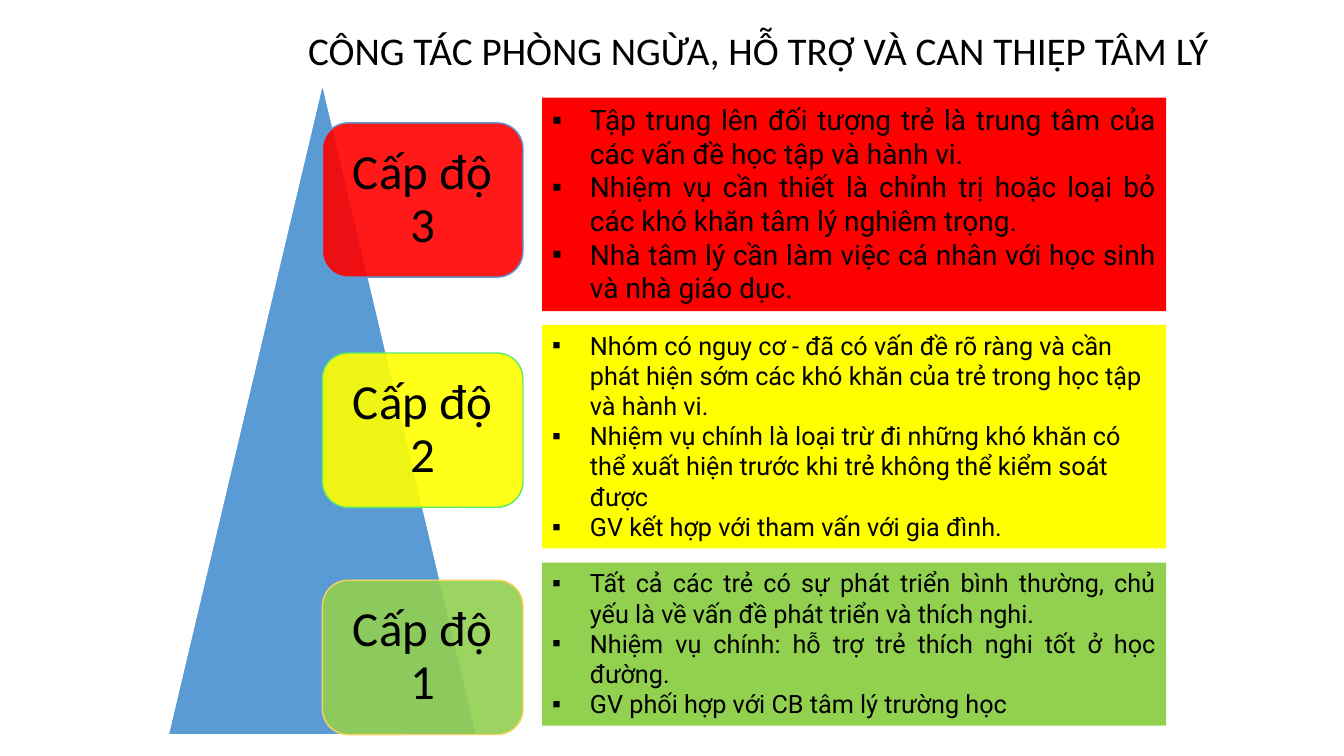
from lxml.etree import SubElement
from pptx import Presentation
from pptx.dml.color import RGBColor
from pptx.enum.shapes import MSO_SHAPE as Shape
from pptx.enum.text import MSO_ANCHOR as Anchor, MSO_AUTO_SIZE as AutoSize, PP_ALIGN as Align
from pptx.oxml.ns import qn
from pptx.util import Pt

BLACK = RGBColor(0x00, 0x00, 0x00)
WHITE = RGBColor(0xFF, 0xFF, 0xFF)
BLUE = RGBColor(0x5B, 0x9B, 0xD5)
RED = RGBColor(0xFF, 0x00, 0x00)
YELLOW = RGBColor(0xFF, 0xFF, 0x00)
GREEN = RGBColor(0x92, 0xD0, 0x50)
MINT = RGBColor(0x5A, 0xEC, 0x68)
GOLD = RGBColor(0xFE, 0xD1, 0x5E)

TITLE = "CÔNG TÁC PHÒNG NGỪA, HỖ TRỢ VÀ CAN THIỆP TÂM LÝ"
COMPARISON_LAYOUT = 4
LABEL_LEFT, LABEL_WIDTH, LABEL_HEIGHT = 230.3, 143.3, 110.2
DUTIES_LEFT, DUTIES_WIDTH = 387.2, 445.7
DUTIES_INDENT = 27

LEVELS = [
    dict(label="Cấp độ 3", color=RED, outline=BLUE, label_top=87.8,
         duties_top=69.7, duties_height=152.5, size=20, align=Align.JUSTIFY,
         duties=["Tập trung lên đối tượng trẻ là trung tâm của các vấn đề học tập và hành vi.",
                 "Nhiệm vụ cần thiết là chỉnh trị hoặc loại bỏ các khó khăn tâm lý nghiêm trọng.",
                 "Nhà tâm lý cần làm việc cá nhân với học sinh và nhà giáo dục."]),
    dict(label="Cấp độ 2", color=YELLOW, outline=MINT, label_top=252.2,
         duties_top=232, duties_height=159.8, size=18, align=Align.LEFT,
         duties=["Nhóm có nguy cơ - đã có vấn đề rõ ràng và cần phát hiện sớm các khó khăn của trẻ "
                 "trong học tập và hành vi.",
                 "Nhiệm vụ chính là loại trừ đi những khó khăn có thể xuất hiện trước khi trẻ "
                 "không thể kiểm soát được",
                 "GV kết hợp với tham vấn với gia đình."]),
    dict(label="Cấp độ 1", color=GREEN, outline=GOLD, label_top=414.5,
         duties_top=401.8, duties_height=116.6, size=18, align=Align.JUSTIFY,
         duties=["Tất cả các trẻ có sự phát triển bình thường, chủ yếu là về vấn đề phát triển "
                 "và thích nghi.",
                 "Nhiệm vụ chính: hỗ trợ trẻ thích nghi tốt ở học đường.",
                 "GV phối hợp với CB tâm lý trường học"]),
]


def place(part, left, top, width, height):
    part.left, part.top, part.width, part.height = Pt(left), Pt(top), Pt(width), Pt(height)


def add_run(paragraph, text, font, size):
    run = paragraph.add_run()
    run.text = text
    run.font.name = font
    run.font.size = Pt(size)
    run.font.bold = False
    run.font.color.rgb = BLACK


def prepare_frame(frame, anchor):
    frame.word_wrap = True
    frame.auto_size = AutoSize.NONE
    frame.vertical_anchor = anchor


def add_outlined_shape(slide, kind, box, color, outline):
    shape = slide.shapes.add_shape(kind, *map(Pt, box))
    shape.shadow.inherit = False
    shape.fill.solid()
    shape.fill.fore_color.rgb = color
    shape.line.color.rgb = outline
    shape.line.width = Pt(1)
    return shape


def fill_title(title, box):
    place(title, *box)
    prepare_frame(title.text_frame, Anchor.TOP)
    heading = title.text_frame.paragraphs[0]
    heading.alignment = Align.CENTER
    add_run(heading, TITLE, "Calibri", 28)


def add_label(slide, box, level):
    label = add_outlined_shape(slide, Shape.ROUNDED_RECTANGLE, box, level["color"], level["outline"])
    tint = label.fill._xPr.find(qn("a:solidFill"))[0]
    SubElement(tint, qn("a:alpha"), val="90000")
    frame = label.text_frame
    prepare_frame(frame, Anchor.MIDDLE)
    frame.margin_left = frame.margin_right = frame.margin_top = frame.margin_bottom = Pt(10.5)
    caption = frame.paragraphs[0]
    caption.alignment = Align.CENTER
    caption.line_spacing = 0.9
    add_run(caption, level["label"], "Calibri", 35)


def fill_duties(body, box, level):
    place(body, *box)
    body.fill.solid()
    body.fill.fore_color.rgb = level["color"]
    frame = body.text_frame
    prepare_frame(frame, Anchor.TOP)
    for number, text in enumerate(level["duties"]):
        duty = frame.add_paragraph() if number else frame.paragraphs[0]
        duty.alignment = level["align"]
        duty.space_before = duty.space_after = Pt(0)
        properties = duty._p.get_or_add_pPr()
        properties.set("marL", str(Pt(DUTIES_INDENT)))
        properties.set("indent", str(-Pt(DUTIES_INDENT)))
        SubElement(properties, qn("a:buFont"), typeface="Arial")
        SubElement(properties, qn("a:buChar"), char="▪")
        add_run(duty, text, "Roboto", level["size"])


def build_levels_slide(deck):
    slide = deck.slides.add_slide(deck.slide_layouts[COMPARISON_LAYOUT])
    title, *bodies = slide.placeholders
    fill_title(title, (208.8, 15.1, 665.3, 36))
    add_outlined_shape(slide, Shape.ISOSCELES_TRIANGLE, (120.2, 59.8, 220.3, 465.1), BLUE, WHITE)
    for level, body in zip(LEVELS, bodies):
        add_label(slide, (LABEL_LEFT, level["label_top"], LABEL_WIDTH, LABEL_HEIGHT), level)
        fill_duties(body, (DUTIES_LEFT, level["duties_top"], DUTIES_WIDTH, level["duties_height"]), level)
    for spare in bodies[len(LEVELS):]:
        spare.element.getparent().remove(spare.element)


def main():
    deck = Presentation()
    deck.slide_width, deck.slide_height = Pt(960), Pt(540)
    build_levels_slide(deck)
    deck.save("out.pptx")


if __name__ == "__main__":
    main()
